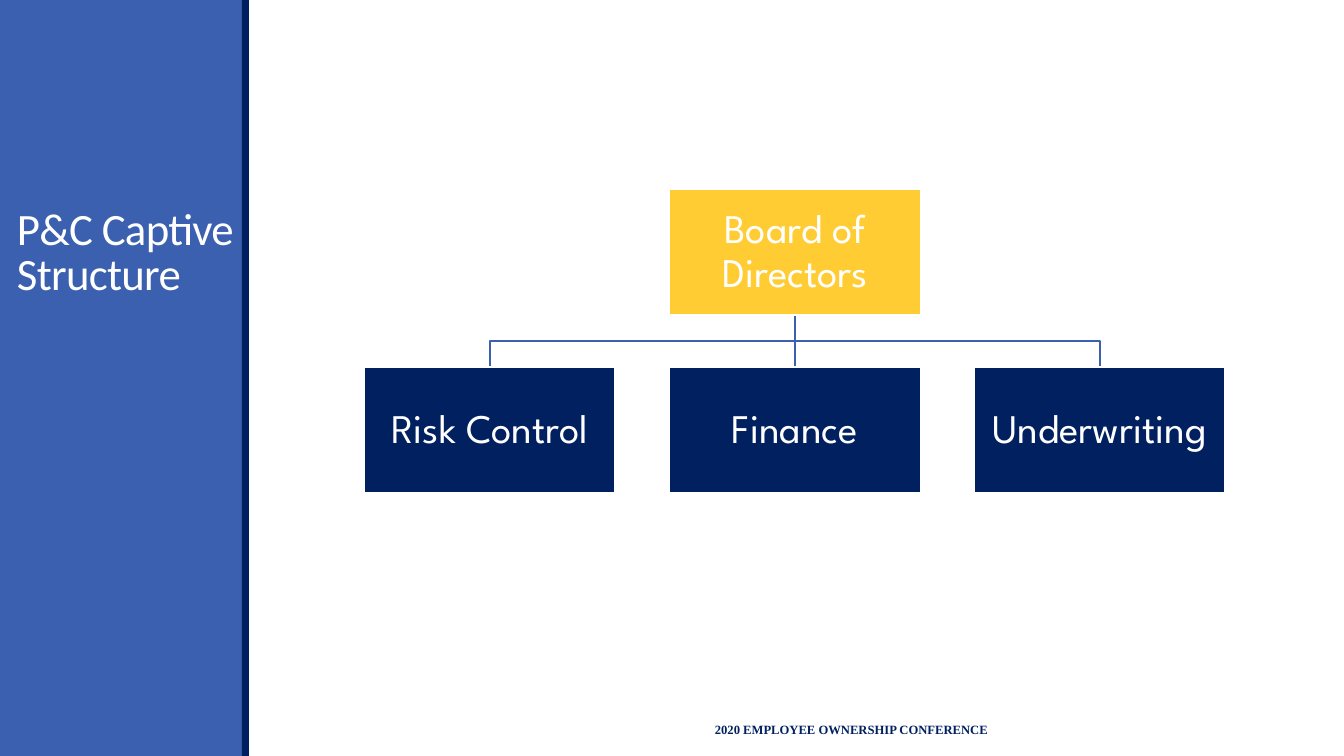
from dataclasses import dataclass

from pptx import Presentation
from pptx.dml.color import RGBColor
from pptx.enum.shapes import MSO_CONNECTOR as Link, MSO_SHAPE as Preset
from pptx.enum.text import MSO_ANCHOR as Anchor, PP_ALIGN as Align
from pptx.oxml.ns import qn
from pptx.shapes.autoshape import Shape
from pptx.slide import Slide
from pptx.util import Pt
from lxml.etree import SubElement

SCALE = 914400 / 100.8
COLORS = {"blue": "3B60AF", "navy": "002060", "gold": "FFCC33", "white": "FFFFFF"}
BOX_W, BOX_H = 252, 126
LEFT, STEP = 364, 305
TOP, ROW = 189, 367


@dataclass
class Box:
    label: str
    col: int
    top: int
    fill: str

    @property
    def left(self) -> int:
        return LEFT + self.col * STEP

    @property
    def mid(self) -> int:
        return self.left + BOX_W // 2


@dataclass
class Style:
    font: str
    size: int
    color: str
    bold: bool = False
    align: Align = Align.LEFT
    anchor: Anchor = Anchor.MIDDLE
    spacing: float = 1.0


LABEL = Style("League Spartan", 29, "white", align=Align.CENTER, spacing=0.9)
TITLE = Style("Calibri", 32, "white", anchor=Anchor.BOTTOM, spacing=0.85)
FOOTER = Style("Times New Roman", 9, "navy", bold=True)

BOARD = Box("Board of Directors", 1, TOP, "gold")
TEAMS = [Box(name, col, ROW, "navy")
         for col, name in enumerate(("Risk Control", "Finance", "Underwriting"))]


def px(count: int) -> int:
    return round(count * SCALE)


def rgb(name: str) -> RGBColor:
    return RGBColor.from_string(COLORS[name])


def write(shape: Shape, text: str, style: Style) -> None:
    frame = shape.text_frame
    frame.text = text
    frame.word_wrap = True
    frame.vertical_anchor = style.anchor
    para = frame.paragraphs[0]
    para.alignment = style.align
    para.line_spacing = style.spacing
    font = para.runs[0].font
    font.name, font.size, font.bold = style.font, Pt(style.size), style.bold
    font.color.rgb = rgb(style.color)


def add_rect(slide: Slide, left: int, top: int, width: int, height: int, fill: str) -> Shape:
    rect = slide.shapes.add_shape(Preset.RECTANGLE, px(left), px(top), px(width), px(height))
    rect.shadow.inherit = False
    rect.fill.solid()
    rect.fill.fore_color.rgb = rgb(fill)
    rect.line.fill.background()
    return rect


def add_text(slide: Slide, left: int, top: int, width: int, height: int,
             text: str, style: Style) -> Shape:
    box = slide.shapes.add_textbox(px(left), px(top), px(width), px(height))
    write(box, text, style)
    return box


def add_box(slide: Slide, box: Box) -> Shape:
    rect = add_rect(slide, box.left, box.top, BOX_W, BOX_H, box.fill)
    rect.line.color.rgb = rgb("white")
    rect.line.width = Pt(2)
    write(rect, box.label, LABEL)
    frame = rect.text_frame
    frame.margin_left = frame.margin_right = px(2)
    frame.margin_top = frame.margin_bottom = px(2)
    return rect


def add_elbow(slide: Slide, start: Box, end: Box) -> None:
    """Draw a bent line from the foot of one box to the head of another."""
    foot = start.top + BOX_H
    bend = (foot + end.top) // 2
    pen = slide.shapes.build_freeform(start.mid, foot, scale=SCALE)
    pen.add_line_segments([(start.mid, bend), (end.mid, bend), (end.mid, end.top)], close=False)
    elbow = pen.convert_to_shape()
    elbow.shadow.inherit = False
    elbow.fill.background()
    elbow.line.color.rgb = rgb("blue")
    elbow.line.width = Pt(1.25)


def add_chart_tree(slide: Slide) -> None:
    """Draw the lines first, so that the box borders cover their ends."""
    first, centre, last = TEAMS
    add_elbow(slide, BOARD, last)
    stem = slide.shapes.add_connector(
        Link.STRAIGHT, px(BOARD.mid), px(TOP + BOX_H), px(centre.mid), px(ROW))
    stem.line.color.rgb = rgb("blue")
    stem.line.width = Pt(1.25)
    SubElement(stem.element.spPr, qn("a:effectLst"))
    add_elbow(slide, BOARD, first)

    rects = [add_box(slide, box) for box in (BOARD, *TEAMS)]
    stem.begin_connect(rects[0], 2)
    stem.end_connect(rects[2], 0)


def main() -> None:
    deck = Presentation()
    deck.slide_width, deck.slide_height = px(1344), px(756)
    slide = deck.slides.add_slide(deck.slide_layouts[6])

    add_rect(slide, 0, 0, 249, 756, "blue")
    add_rect(slide, 242, 0, 7, 756, "navy")
    title = add_text(slide, 7, 53, 242, 252, "P&C Captive Structure", TITLE)
    title.text_frame.paragraphs[0].runs[0].font._element.set("spc", "-50")
    add_text(slide, 705, 709, 409, 40, "2020 EMPLOYEE OWNERSHIP CONFERENCE", FOOTER)
    add_chart_tree(slide)

    deck.save("out.pptx")


if __name__ == "__main__":
    main()
